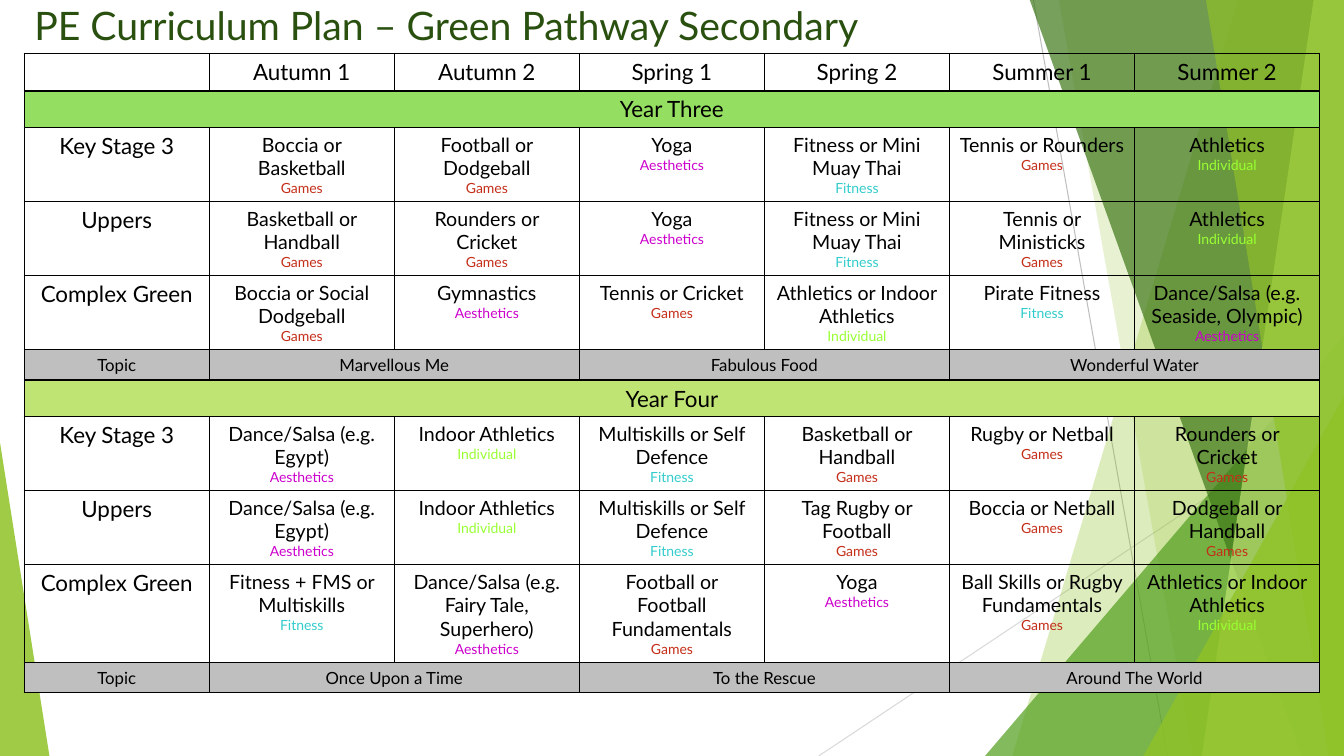
from lxml.etree import SubElement
from pptx import Presentation
from pptx.dml.color import RGBColor
from pptx.enum.shapes import MSO_CONNECTOR, MSO_SHAPE
from pptx.enum.text import MSO_ANCHOR, PP_ALIGN
from pptx.oxml.ns import qn
from pptx.util import Inches, Pt

FONT = "Lato"
BLACK = RGBColor(0x00, 0x00, 0x00)
DARK_GREEN = RGBColor(0x2A, 0x50, 0x10)
FOREST = RGBColor(0x3F, 0x78, 0x19)
MID_GREEN = RGBColor(0x54, 0xA0, 0x21)
LEAF = RGBColor(0x90, 0xC2, 0x26)
LIME = RGBColor(0xC0, 0xE4, 0x74)
BAND_GREEN = RGBColor(0x94, 0xDE, 0x61)
GREY = RGBColor(0xBF, 0xBF, 0xBF)
PALE_GREY = RGBColor(0xD9, 0xD9, 0xD9)
STRAND_COLORS = {
    "Games": RGBColor(0xC4, 0x2F, 0x1A),
    "Aesthetics": RGBColor(0xCC, 0x00, 0xCC),
    "Fitness": RGBColor(0x33, 0xCC, 0xCC),
    "Individual": RGBColor(0x99, 0xFF, 0x33),
}

TITLE = "PE Curriculum Plan – Green Pathway Secondary"
TERMS = ["", "Autumn 1", "Autumn 2", "Spring 1", "Spring 2", "Summer 1", "Summer 2"]
YEARS = [
    {
        "name": "Year Three",
        "color": BAND_GREEN,
        "groups": [
            ("Key Stage 3", 0.73, [
                ("Boccia or Basketball", "Games"), ("Football or Dodgeball", "Games"),
                ("Yoga", "Aesthetics"), ("Fitness or Mini Muay Thai", "Fitness"),
                ("Tennis or Rounders", "Games"), ("Athletics", "Individual")]),
            ("Uppers", 0.73, [
                ("Basketball or Handball", "Games"), ("Rounders or Cricket", "Games"),
                ("Yoga", "Aesthetics"), ("Fitness or Mini Muay Thai", "Fitness"),
                ("Tennis or Ministicks", "Games"), ("Athletics", "Individual")]),
            ("Complex Green", 0.73, [
                ("Boccia or Social Dodgeball", "Games"), ("Gymnastics", "Aesthetics"),
                ("Tennis or Cricket", "Games"), ("Athletics or Indoor Athletics", "Individual"),
                ("Pirate Fitness", "Fitness"),
                ("Dance/Salsa (e.g. Seaside, Olympic)", "Aesthetics")]),
        ],
        "topics": ["Marvellous Me", "Fabulous Food", "Wonderful Water"],
    },
    {
        "name": "Year Four",
        "color": LIME,
        "groups": [
            ("Key Stage 3", 0.73, [
                ("Dance/Salsa (e.g. Egypt)", "Aesthetics"), ("Indoor Athletics", "Individual"),
                ("Multiskills or Self Defence", "Fitness"), ("Basketball or Handball", "Games"),
                ("Rugby or Netball", "Games"), ("Rounders or Cricket", "Games")]),
            ("Uppers", 0.73, [
                ("Dance/Salsa (e.g. Egypt)", "Aesthetics"), ("Indoor Athletics", "Individual"),
                ("Multiskills or Self Defence", "Fitness"), ("Tag Rugby or Football", "Games"),
                ("Boccia or Netball", "Games"), ("Dodgeball or Handball", "Games")]),
            ("Complex Green", 0.97, [
                ("Fitness + FMS or Multiskills", "Fitness"),
                ("Dance/Salsa (e.g. Fairy Tale, Superhero)", "Aesthetics"),
                ("Football or Football Fundamentals", "Games"), ("Yoga", "Aesthetics"),
                ("Ball Skills or Rugby Fundamentals", "Games"),
                ("Athletics or Indoor Athletics", "Individual")]),
        ],
        "topics": ["Once Upon a Time", "To the Rescue", "Around The World"],
    },
]

WIDTH, HEIGHT = 13.33, 7.5
TABLE_LEFT, TABLE_TOP, TABLE_WIDTH = 0.24, 0.53, 12.85
BAND_HEIGHT, TOPIC_HEIGHT = 0.36, 0.3

RAYS = [((10.25, 0), (11.58, HEIGHT), GREY), ((WIDTH, 4.03), (8.12, HEIGHT), PALE_GREY)]
FACETS = [
    ("blade", 12.28, 10.04, LEAF, 30),
    ("blade", 10.5, 11.83, LEAF, 20),
    ("triangle", (9.77, 3.33, 3.56), 1, MID_GREEN, 72),
    ("blade", 10.21, 12.91, FOREST, 70),
    ("blade", 13.03, 11.92, LIME, 70),
    ("blade", 11.96, 13.18, LEAF, 65),
    ("triangle", (11.34, 3.93, 1.99), 1, LEAF, 80),
    ("triangle", (0, 4.39, 0.49), 0, LEAF, 85),
]


def add_ray(page, start, end, color):
    ray = page.shapes.add_connector(
        MSO_CONNECTOR.STRAIGHT, *[Inches(value) for value in start + end])
    ray.line.color.rgb = color
    ray.line.width = Pt(0.75)
    SubElement(ray._element.spPr, qn("a:effectLst"))


def add_facet(page, kind, place, tip, color, opacity):
    if kind == "blade":
        top, right, bottom = Inches(-0.01), Inches(WIDTH), Inches(HEIGHT)
        builder = page.shapes.build_freeform(Inches(place), top)
        builder.add_line_segments([(right, top), (right, bottom), (Inches(tip), bottom)])
        facet = builder.convert_to_shape()
    else:
        left, top, width = place
        facet = page.shapes.add_shape(
            MSO_SHAPE.ISOSCELES_TRIANGLE, Inches(left), Inches(top),
            Inches(width), Inches(HEIGHT - top))
        facet.adjustments[0] = tip
    facet.shadow.inherit = False
    facet.line.fill.background()
    facet.fill.solid()
    facet.fill.fore_color.rgb = color
    tint = facet._element.spPr.find(qn("a:solidFill"))[0]
    SubElement(tint, qn("a:alpha"), val=str(opacity * 1000))


def add_span(para, text, size, color=BLACK):
    span = para.add_run()
    span.text = text
    span.font.name = FONT
    span.font.size = Pt(size)
    span.font.color.rgb = color


def fill_cell(cell, lines, color=None):
    for index, (text, size, ink) in enumerate(lines):
        para = cell.text_frame.paragraphs[0] if index == 0 else cell.text_frame.add_paragraph()
        para.alignment = PP_ALIGN.CENTER
        if text:
            add_span(para, text, size, ink)
        else:
            SubElement(para._p, qn("a:endParaRPr"), sz=str(size * 100))
    if color is None:
        cell.fill.background()
    else:
        cell.fill.solid()
        cell.fill.fore_color.rgb = color


def add_borders(cell):
    properties = cell._tc.get_or_add_tcPr()
    for side in ("lnL", "lnR", "lnT", "lnB"):
        edge = SubElement(properties, qn("a:" + side), w=str(Pt(1)))
        paint = SubElement(edge, qn("a:solidFill"))
        SubElement(paint, qn("a:srgbClr"), val=str(BLACK))


def plan_rows():
    rows = [(BAND_HEIGHT, [(1, [(term, 16, BLACK)], None) for term in TERMS])]
    for year in YEARS:
        rows.append((BAND_HEIGHT, [(7, [(year["name"], 16, BLACK)], year["color"])]))
        for group, height, sessions in year["groups"]:
            cells = [(1, [(group, 16, BLACK)], None)]
            for activity, strand in sessions:
                lines = [(activity, 14, BLACK), (strand, 10, STRAND_COLORS[strand])]
                cells.append((1, lines, None))
            rows.append((height, cells))
        topics = [(1, [("Topic", 12, BLACK)], GREY)]
        topics += [(2, [(topic, 12, BLACK)], GREY) for topic in year["topics"]]
        rows.append((TOPIC_HEIGHT, topics))
    return rows


def add_plan(page):
    rows = plan_rows()
    total = sum(height for height, cells in rows)
    table = page.shapes.add_table(
        len(rows), len(TERMS), Inches(TABLE_LEFT), Inches(TABLE_TOP),
        Inches(TABLE_WIDTH), Inches(total)).table
    table.first_row = False
    table.horz_banding = False
    for column in table.columns:
        column.width = Inches(TABLE_WIDTH / len(TERMS))
    for cell in table.iter_cells():
        add_borders(cell)
    for row_index, (height, cells) in enumerate(rows):
        table.rows[row_index].height = Inches(height)
        column_index = 0
        for width, lines, color in cells:
            cell = table.cell(row_index, column_index)
            if width > 1:
                cell.merge(table.cell(row_index, column_index + width - 1))
            fill_cell(cell, lines, color)
            column_index += width


def add_title(page):
    title = page.shapes.title
    title.left, title.top = Inches(TABLE_LEFT), Inches(-0.04)
    title.width, title.height = Inches(TABLE_WIDTH), Inches(0.75)
    title.text_frame.vertical_anchor = MSO_ANCHOR.TOP
    para = title.text_frame.paragraphs[0]
    para.alignment = PP_ALIGN.LEFT
    add_span(para, TITLE, 28, DARK_GREEN)
    page.shapes._spTree.append(title._element)


def main():
    deck = Presentation()
    deck.slide_width, deck.slide_height = Inches(WIDTH), Inches(HEIGHT)
    page = deck.slides.add_slide(deck.slide_layouts[5])
    for ray in RAYS:
        add_ray(page, *ray)
    for facet in FACETS:
        add_facet(page, *facet)
    add_title(page)
    add_plan(page)
    deck.save("out.pptx")


if __name__ == "__main__":
    main()
